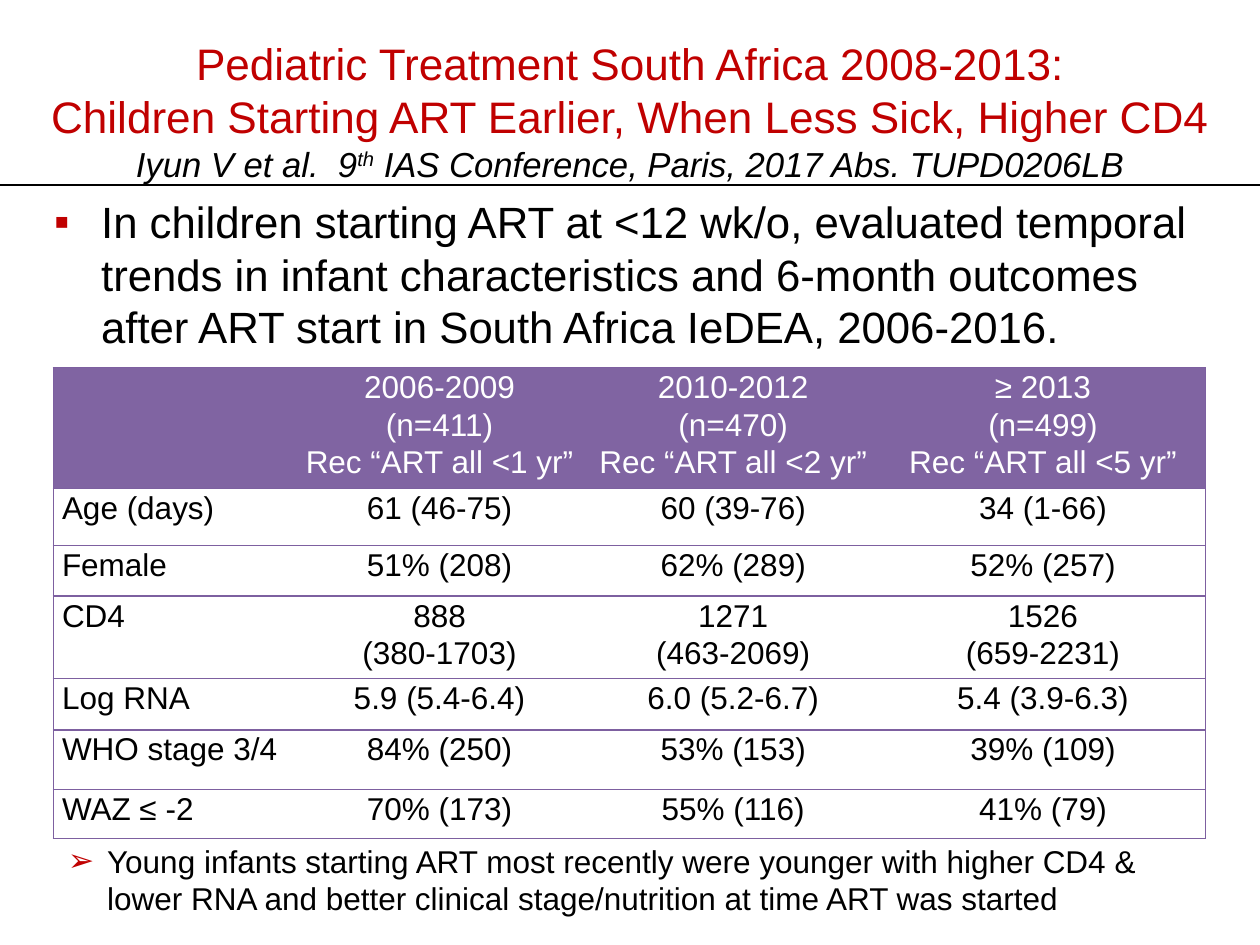
from lxml import etree
from pptx import Presentation, util as u
from pptx.dml.color import RGBColor
from pptx.enum import shapes, text
from pptx.oxml.ns import qn

FONT = "Arial"
BLACK, WHITE, RED = "000000", "FFFFFF", "C00000"
HEADER_FILL, RULE = "8064A2", "7D60A0"
COLUMN_WIDTHS = [4.83, 5.92, 5.92, 6.57]
ROW_HEIGHTS = [2.27, 1.15, 1.01, 1.67, 1.03, 1.2, 0.99]
ROWS = [
    ["", "2006-2009\n(n=411)\nRec “ART all <1 yr”",
     "2010-2012\n(n=470)\nRec “ART all <2 yr”",
     "≥ 2013\n(n=499)\nRec “ART all <5 yr”"],
    ["Age (days)", "61 (46-75)", "60 (39-76)", "34 (1-66)"],
    ["Female", "51% (208)", "62% (289)", "52% (257)"],
    ["CD4", "888\n(380-1703)", "1271\n(463-2069)", "1526\n(659-2231)"],
    ["Log RNA", "5.9 (5.4-6.4)", "6.0 (5.2-6.7)", "5.4 (3.9-6.3)"],
    ["WHO stage 3/4", "84% (250)", "53% (153)", "39% (109)"],
    ["WAZ ≤ -2", "70% (173)", "55% (116)", "41% (79)"],
]


def color(value):
    return RGBColor.from_string(value)


def format_font(font, size, value, italic=False):
    font.name = FONT
    font.size = u.Pt(size)
    font.italic = italic
    font.color.rgb = color(value)


def add_text(slide, left, top, width, height, anchor=text.MSO_ANCHOR.TOP):
    box = slide.shapes.add_textbox(u.Cm(left), u.Cm(top), u.Cm(width), u.Cm(height))
    frame = box.text_frame
    frame.word_wrap = True
    frame.vertical_anchor = anchor
    return frame


def add_title(slide):
    frame = add_text(slide, 0.13, 0.64, 25.14, 3.17, text.MSO_ANCHOR.MIDDLE)
    heading = frame.paragraphs[0]
    heading.alignment = text.PP_ALIGN.CENTER
    heading.text = ("Pediatric Treatment South Africa 2008-2013:\v"
                    "Children Starting ART Earlier, When Less Sick, Higher CD4\v")
    for run in heading.runs:
        format_font(run.font, 25.2, RED)
    citation = ["Iyun V et al.  9", "th", " IAS Conference, Paris, 2017 Abs. TUPD0206LB"]
    for part in citation:
        run = heading.add_run()
        run.text = part
        format_font(run.font, 19.8, BLACK, italic=True)
        if part == "th":
            run.font._element.set("baseline", "30000")


def add_bullet(slide, place, wording, size, mark, indent):
    point = add_text(slide, *place).paragraphs[0]
    point.text = wording
    properties = point._p.get_or_add_pPr()
    properties.set("marL", str(u.Cm(indent)))
    properties.set("indent", str(-u.Cm(indent)))
    mark_color = etree.SubElement(properties, qn("a:buClr"))
    etree.SubElement(mark_color, qn("a:srgbClr"), val=RED)
    etree.SubElement(properties, qn("a:buFont"), typeface=FONT)
    etree.SubElement(properties, qn("a:buChar"), char=mark)
    format_font(point.runs[0].font, size, BLACK)


def set_borders(cell, visible_sides):
    properties = cell._tc.get_or_add_tcPr()
    for side in "LRTB":
        border = etree.SubElement(properties, qn(f"a:ln{side}"), w=str(u.Pt(0.75)))
        if side in visible_sides:
            fill = etree.SubElement(border, qn("a:solidFill"))
            etree.SubElement(fill, qn("a:srgbClr"), val=RULE)
        else:
            etree.SubElement(border, qn("a:noFill"))


def fill_cell(cell, wording, is_header, is_label):
    cell.margin_left = cell.margin_right = u.Cm(0.18)
    cell.margin_top = cell.margin_bottom = 0
    cell.text_frame.text = wording
    for paragraph in cell.text_frame.paragraphs:
        paragraph.alignment = text.PP_ALIGN.LEFT if is_label else text.PP_ALIGN.CENTER
        paragraph.line_spacing = 1.07
        format_font(paragraph.font, 18, WHITE if is_header else BLACK)
        paragraph.font.bold = False
        for run in paragraph.runs:
            format_font(run.font, 18, WHITE if is_header else BLACK)
            run.font.bold = False
    cell.fill.solid()
    cell.fill.fore_color.rgb = color(HEADER_FILL if is_header else WHITE)


def add_outcomes_table(slide):
    outcomes = slide.shapes.add_table(
        len(ROWS), len(COLUMN_WIDTHS), u.Cm(1.07), u.Cm(7.41),
        u.Cm(sum(COLUMN_WIDTHS)), u.Cm(sum(ROW_HEIGHTS))).table
    for column, width in zip(outcomes.columns, COLUMN_WIDTHS):
        column.width = u.Cm(width)
    for row, height in zip(outcomes.rows, ROW_HEIGHTS):
        row.height = u.Cm(height)
    last = len(COLUMN_WIDTHS) - 1
    for r, wordings in enumerate(ROWS):
        for c, wording in enumerate(wordings):
            cell = outcomes.cell(r, c)
            set_borders(cell, "TB" + "L" * (c == 0) + "R" * (c == last))
            fill_cell(cell, wording, r == 0, c == 0)


def add_rule(slide, top, width):
    rule = slide.shapes.add_connector(
        shapes.MSO_CONNECTOR.STRAIGHT, 0, u.Cm(top), u.Cm(width), u.Cm(top))
    rule.line.color.rgb = color(BLACK)
    rule.line.width = u.Pt(0.75)
    etree.SubElement(rule._element.spPr, qn("a:effectLst"))


def main():
    deck = Presentation()
    deck.slide_width, deck.slide_height = u.Cm(25.4), u.Cm(19.05)
    slide = deck.slides.add_slide(deck.slide_layouts[6])
    add_title(slide)
    add_bullet(slide, (0.84, 3.81, 24.03, 4.29),
               "In children starting ART at <12 wk/o, evaluated temporal trends in infant "
               "characteristics and 6-month outcomes after ART start in South Africa "
               "IeDEA, 2006-2016.", 25, "▪", 0.95)
    add_outcomes_table(slide)
    add_rule(slide, 3.73, 25.4)
    add_bullet(slide, (1.12, 16.84, 22.66, 1.8),
               "Young infants starting ART most recently were younger with higher CD4 & "
               "lower RNA and better clinical stage/nutrition at time ART was started",
               18, "➢", 0.79)
    deck.save("out.pptx")


if __name__ == "__main__":
    main()
